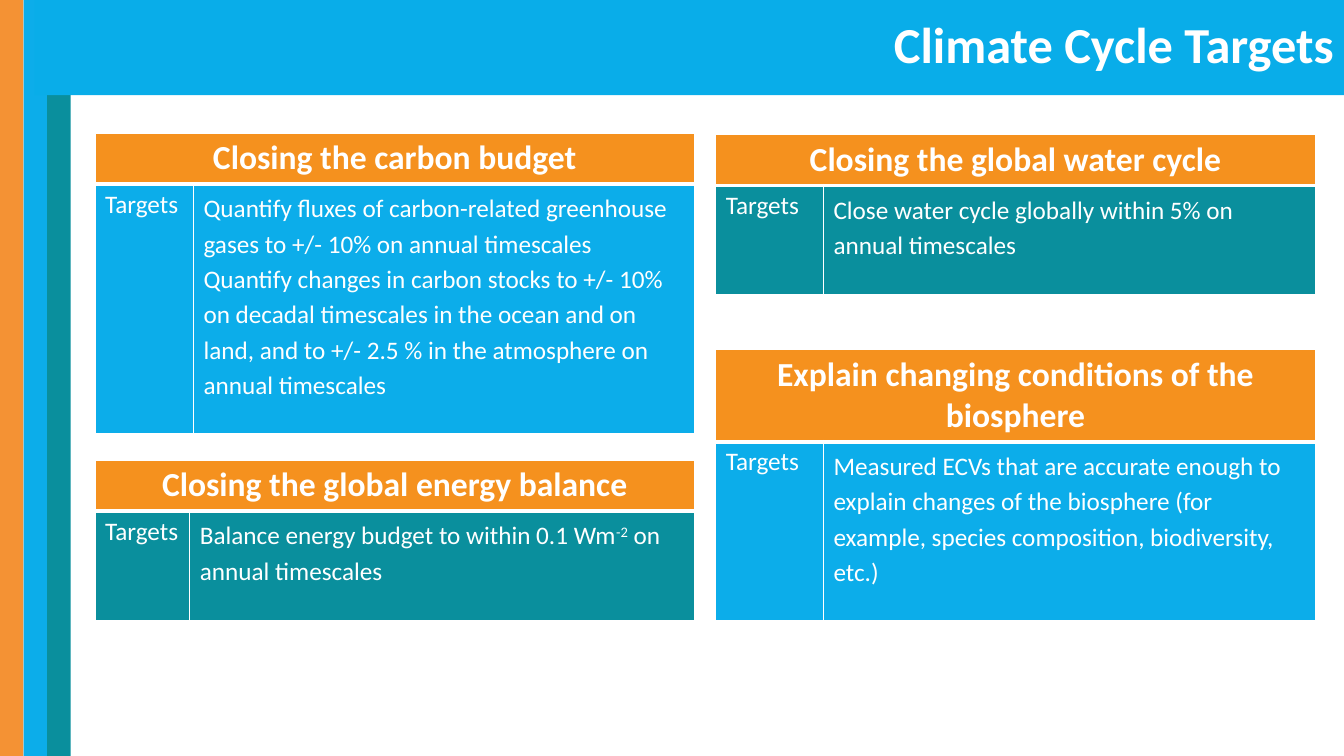
from dataclasses import dataclass

from lxml.etree import SubElement
from pptx import Presentation
from pptx.dml.color import RGBColor
from pptx.enum.shapes import MSO_SHAPE as Preset
from pptx.enum.text import MSO_ANCHOR as Anchor, MSO_AUTO_SIZE as AutoSize, PP_ALIGN as Align
from pptx.oxml.ns import qn
from pptx.util import Pt


@dataclass(frozen=True)
class Theme:
    font: str = "Calibri"
    white: str = "FFFFFF"
    bar_orange: str = "F49234"
    header_orange: str = "F5911E"
    title_blue: str = "09ADE9"
    blue: str = "0CADEA"
    teal: str = "0A8F9D"
    title_size: float = 36
    header_size: float = 24
    body_size: float = 18


class SlideBuilder:
    def __init__(self, deck, theme):
        self.theme = theme
        self.page = deck.slides.add_slide(deck.slide_layouts[5])

    def paint(self, target, color):
        target.fill.solid()
        target.fill.fore_color.rgb = RGBColor.from_string(color)

    def style(self, para, size, bold=False, align=Align.LEFT, spacing=None):
        para.font.name = self.theme.font
        para.font.size = Pt(size)
        para.font.bold = bold
        para.font.color.rgb = RGBColor.from_string(self.theme.white)
        para.alignment = align
        para.line_spacing = spacing

    def bar(self, left, width, height, color):
        box = self.page.shapes.add_shape(Preset.RECTANGLE, Pt(left), 0, Pt(width), Pt(height))
        box.shadow.inherit = False
        box.line.fill.background()
        self.paint(box, color)

    def title(self, text, left, width, height):
        """Fill the title placeholder and bring it in front of the bars."""
        box = self.page.shapes.title
        box.left, box.top, box.width, box.height = Pt(left), 0, Pt(width), Pt(height)
        self.paint(box, self.theme.title_blue)
        frame = box.text_frame
        frame.text = text
        frame.auto_size = AutoSize.NONE
        frame.vertical_anchor = Anchor.MIDDLE
        self.style(frame.paragraphs[0], self.theme.title_size, True, Align.RIGHT, 0.9)
        self.page.shapes._spTree.append(box._element)

    def borders(self, cell, bottom):
        properties = cell._tc.get_or_add_tcPr()
        for side, width in (("L", 1), ("R", 1), ("T", 1), ("B", bottom)):
            line = SubElement(properties, qn(f"a:ln{side}"), w=str(Pt(width)))
            fill = SubElement(line, qn("a:solidFill"))
            SubElement(fill, qn("a:srgbClr"), val=self.theme.white)

    def target_table(self, left, top, columns, rows, color, heading, targets):
        """Each target is a list of spans; every second span is superscript."""
        table = self.page.shapes.add_table(
            2, 2, Pt(left), Pt(top), Pt(sum(columns)), Pt(sum(rows))).table
        for column, width in zip(table.columns, columns):
            column.width = Pt(width)
        for index, height in enumerate(rows):
            table.rows[index].height = Pt(height)
            for cell in table.rows[index].cells:
                self.borders(cell, 1 if index else 3)
                self.paint(cell, color if index else self.theme.header_orange)

        header, label, body = table.cell(0, 0), table.cell(1, 0), table.cell(1, 1)
        header.merge(table.cell(0, 1))
        header.text = heading
        self.style(header.text_frame.paragraphs[0], self.theme.header_size, True, Align.CENTER)
        label.text = "Targets"
        self.style(label.text_frame.paragraphs[0], self.theme.body_size)
        frame = body.text_frame
        for number, spans in enumerate(targets):
            para = frame.add_paragraph() if number else frame.paragraphs[0]
            self.style(para, self.theme.body_size, spacing=1.15)
            for position, text in enumerate(spans):
                span = para.add_run()
                span.text = text
                if position % 2:
                    span.font._element.set("baseline", "30000")


def main():
    deck = Presentation()
    deck.slide_width, deck.slide_height = Pt(960), Pt(540)
    theme = Theme()
    slide = SlideBuilder(deck, theme)

    bar_width = 16.8
    for index, color in enumerate((theme.bar_orange, theme.blue, theme.teal)):
        slide.bar(index * bar_width, bar_width, 540, color)
    slide.title("Climate Cycle Targets", 24.5, 935.5, 68)

    left, right = 67.8, 511.2
    right_columns = (77, 351.4)
    header, short_body = 36.5, 78
    slide.target_table(
        right, 96, right_columns, (header, short_body), theme.teal,
        "Closing the global water cycle",
        [["Close water cycle globally within 5% on annual timescales"]])
    slide.target_table(
        left, 95, (70.4, 358), (header, 178), theme.blue,
        "Closing the carbon budget",
        [["Quantify fluxes of carbon-related greenhouse gases to +/- 10% on annual timescales"],
         ["Quantify changes in carbon stocks to +/- 10% on decadal timescales in the ocean "
          "and on land, and to +/- 2.5 % in the atmosphere on annual timescales"]])
    slide.target_table(
        right, 249.8, right_columns, (65.8, 128), theme.blue,
        "Explain changing conditions of the biosphere",
        [["Measured ECVs that are accurate enough to explain changes of the biosphere "
          "(for example, species composition, biodiversity, etc.)"]])
    slide.target_table(
        left, 328.5, (67.8, 360.6), (header, short_body), theme.teal,
        "Closing the global energy balance",
        [["Balance energy budget to within 0.1 Wm", "-2", " on annual timescales"]])

    deck.save("out.pptx")


if __name__ == "__main__":
    main()
